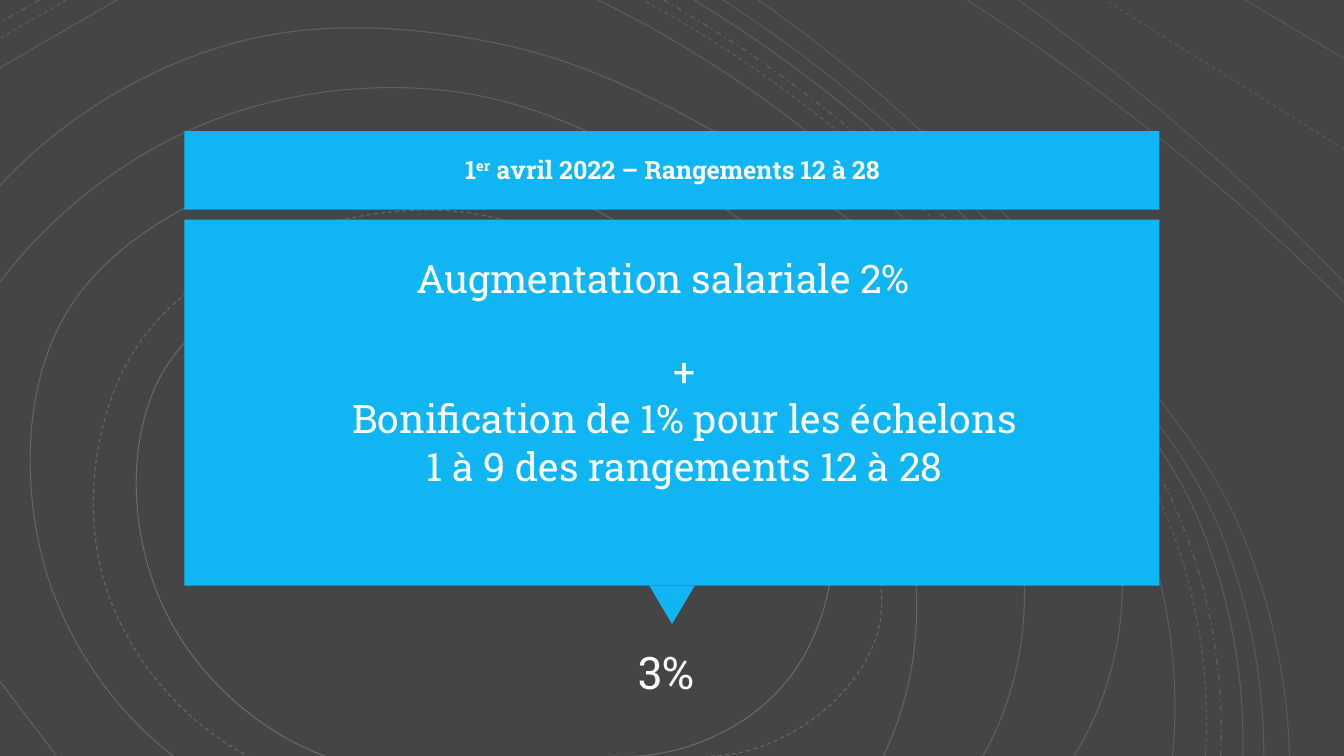
from lxml.etree import SubElement
from pptx import Presentation
from pptx.dml.color import RGBColor
from pptx.enum.dml import MSO_LINE
from pptx.enum.shapes import MSO_SHAPE
from pptx.enum.text import MSO_ANCHOR, MSO_AUTO_SIZE, PP_ALIGN
from pptx.oxml.ns import qn
from pptx.util import Inches, Pt

COLORS = {"background": "454545", "panel": "10B6F4", "white": "FFFFFF"}
FONT = "Roboto Slab"
SOLID, DASH, DASH_DOT = MSO_LINE.SOLID, MSO_LINE.DASH, MSO_LINE.DASH_DOT
WIDTH, HEIGHT = 13.33, 7.5
SLOPE = 0.58


def rgb(name):
    return RGBColor.from_string(COLORS[name])


def write_text(shape, paragraphs, alignment, bold=False):
    frame = shape.text_frame
    frame.word_wrap = True
    frame.auto_size = MSO_AUTO_SIZE.NONE
    frame.vertical_anchor = MSO_ANCHOR.TOP
    for index, runs in enumerate(paragraphs):
        paragraph = frame.add_paragraph() if index else frame.paragraphs[0]
        paragraph.alignment = alignment
        for text, size in runs:
            run = paragraph.add_run()
            run.text = text
            run.font.name = FONT
            run.font.size = Pt(size)
            run.font.bold = bold
            run.font.color.rgb = rgb("white")


presentation = Presentation()
presentation.slide_width = Inches(WIDTH)
presentation.slide_height = Inches(HEIGHT)
slide = presentation.slides.add_slide(presentation.slide_layouts[5])
slide.background.fill.solid()
slide.background.fill.fore_color.rgb = rgb("background")

contours = [
    (SOLID, 17, [(8.76, HEIGHT), (8.99, 5.21), (7.38, 3.15), (4.12, 1.53),
                 (2.2, 1.88), (0.68, 3.07), (0.39, 5.41), (1.72, HEIGHT)]),
    (SOLID, 20, [(6.07, HEIGHT), (7.75, 6.82), (8.25, 5.29), (6.84, 3.51),
                 (4.8, 2.48), (1.51, 3.91), (1.61, 6), (3.22, HEIGHT)]),
    (DASH, 18, [(7.05, HEIGHT), (8.67, 6.38), (8.17, 4.4), (6.51, 2.9),
                (4.43, 2.09), (1.22, 3.68), (1.04, 5.79), (2.46, HEIGHT)]),
    (SOLID, 15, [(9.75, HEIGHT), (10.07, 5.14), (8.38, 3.06), (6.63, 1.72),
                 (4.58, 0.92), (2.05, 1.22), (0, 2.8)]),
    (SOLID, 14, [(10.65, HEIGHT), (11.06, 5.14), (9.44, 3.07), (7.37, 1.47),
                 (4.98, 0.44), (2.31, 0.43), (0, 1.84)]),
    (SOLID, 15, [(0, 6.76), (0.56, HEIGHT)]),
    (SOLID, 11, [(WIDTH, 3), (11.54, 1.4), (9.59, 0)]),
    (SOLID, 10, [(WIDTH, 2.8), (11.67, 1.23), (10.1, 0)]),
    (DASH, 10, [(WIDTH, 1.48), (10.96, 0)]),
    (SOLID, 10, [(WIDTH, 0.58), (12.35, 0)]),
]
for dash, opacity, left in [(SOLID, 13, 1.16), (DASH, 12, 0.66), (DASH_DOT, 12, 0.39)]:
    contours.append((dash, opacity, [(left, 0), (0, left * SLOPE)]))

inner_edge = [(11.63, HEIGHT), (11.25, 4.98), (9.63, 2.87), (7.92, 1.24), (5.93, 0)]
outer_edge = [(12.79, HEIGHT), (12.28, 5.2), (10.9, 3.22), (9.33, 1.48), (7.52, 0)]
for dash, share in [(SOLID, 0), (DASH, 0.28), (DASH_DOT, 0.41),
                    (SOLID, 0.6), (SOLID, 0.78), (SOLID, 1)]:
    band = [(x + (outer_x - x) * share, y + (outer_y - y) * share)
            for (x, y), (outer_x, outer_y) in zip(inner_edge, outer_edge)]
    contours.append((dash, round(13 - 2 * share), band))

for dash, opacity, points in contours:
    knots = [complex(*point) for point in points]
    chords = [end - start for start, end in zip(knots, knots[1:])]
    units = [chord / abs(chord) for chord in chords]
    tangents = []
    for before, after in zip(chords, chords[1:]):
        blend = before / abs(before) ** 2 + after / abs(after) ** 2
        tangents.append(blend / abs(blend))
    nearest = tangents or units
    tangents = [units[0] ** 2 * nearest[0].conjugate(), *tangents,
                units[-1] ** 2 * nearest[-1].conjugate()]
    nodes = []
    for index, chord in enumerate(chords):
        reach = abs(chord) / 3
        nodes += [knots[index] + tangents[index] * reach,
                  knots[index + 1] - tangents[index + 1] * reach, knots[index + 1]]

    builder = slide.shapes.build_freeform(Inches(knots[0].real), Inches(knots[0].imag))
    builder.add_line_segments([(Inches(node.real), Inches(node.imag)) for node in nodes], close=False)
    contour = builder.convert_to_shape()
    contour.shadow.inherit = False
    contour.fill.background()
    contour.line.width = Pt(1 if dash == DASH_DOT else 0.75)
    contour.line.color.rgb = rgb("white")
    contour.line.dash_style = dash
    line_color = contour._element.xpath(".//a:ln//a:srgbClr")[0]
    SubElement(line_color, qn("a:alpha")).set("val", str(opacity * 1000))
    outline = contour._element.xpath(".//a:path")[0]
    segments = outline.findall(qn("a:lnTo"))
    for first in range(0, len(segments), 3):
        curve = SubElement(outline, qn("a:cubicBezTo"))
        for segment in segments[first:first + 3]:
            curve.append(segment[0])
            outline.remove(segment)

for kind, left, top, width, height, rotation in [
    (MSO_SHAPE.RECTANGLE, 1.83, 1.3, 9.67, 0.78, 0),
    (MSO_SHAPE.ISOSCELES_TRIANGLE, 6.44, 5.81, 0.45, 0.38, 180),
    (MSO_SHAPE.RECTANGLE, 1.83, 2.18, 9.67, 3.63, 0),
]:
    panel = slide.shapes.add_shape(kind, Inches(left), Inches(top), Inches(width), Inches(height))
    panel.rotation = rotation
    panel.shadow.inherit = False
    panel.fill.solid()
    panel.fill.fore_color.rgb = rgb("panel")
    panel.line.fill.background()

title = slide.shapes.title
title.left, title.top = Inches(2.04), Inches(1.48)
title.width, title.height = Inches(9.26), Inches(0.4)
slide.shapes._spTree.append(title._element)
write_text(title, [[("1", 18), ("er", 18), (" avril 2022 – Rangements 12 à 28", 18)]],
           PP_ALIGN.CENTER, bold=True)
ordinal = title.text_frame.paragraphs[0].runs[1]
ordinal.font._element.set("baseline", "30000")

for left, top, width, height, alignment, paragraphs in [
    (3.29, 2.47, 6.67, 0.57, PP_ALIGN.CENTER, [[("Augmentation salariale 2% ", 28)]]),
    (3.33, 3.4, 6.92, 1.51, PP_ALIGN.CENTER, [
        [("+", 28)],
        [("Bonification de 1% pour les échelons 1 à 9 des rangements 12 à 28", 28)],
    ]),
    (6.17, 6.35, 1, 0.64, PP_ALIGN.LEFT, [[(" ", 18), ("3%", 32)]]),
]:
    text_box = slide.shapes.add_textbox(Inches(left), Inches(top), Inches(width), Inches(height))
    write_text(text_box, paragraphs, alignment)

presentation.save("out.pptx")
